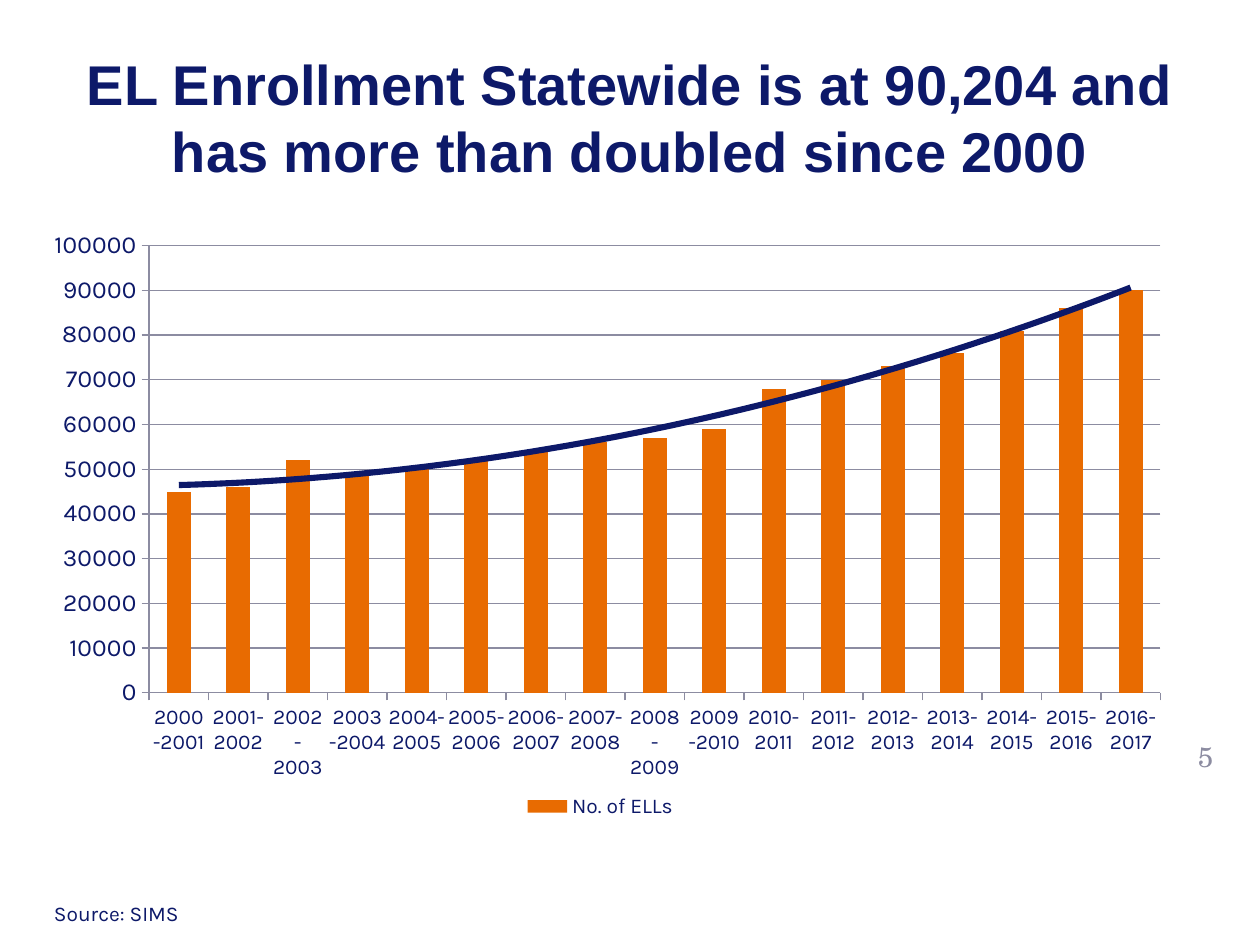
from pptx import Presentation
from pptx.chart.data import CategoryChartData
from pptx.dml.color import RGBColor
from pptx.enum.chart import XL_CHART_TYPE, XL_LEGEND_POSITION, XL_TICK_MARK
from pptx.enum.text import MSO_ANCHOR, PP_ALIGN
from pptx.oxml import parse_xml
from pptx.oxml.ns import nsdecls, qn
from pptx.util import Pt

COLUMN = XL_CHART_TYPE.COLUMN_CLUSTERED
BOTTOM = XL_LEGEND_POSITION.BOTTOM
TICK_OUT, TICK_NONE = XL_TICK_MARK.OUTSIDE, XL_TICK_MARK.NONE
TOP, MIDDLE = MSO_ANCHOR.TOP, MSO_ANCHOR.MIDDLE
LEFT, CENTER = PP_ALIGN.LEFT, PP_ALIGN.CENTER
NAVY, ORANGE, GRAY = "0D1969", "E86B01", "8C8CA1"


def style(font, name, size, color, bold=False):
    font.name, font.size, font.bold = name, Pt(size), bold
    font.color.rgb = RGBColor.from_string(color)


def set_layout(parent, index, x, y, w, h, inner=False):
    """Give a chart part a fixed place, in fractions of the chart."""
    for old in parent.findall(qn("c:layout")):
        parent.remove(old)
    target = '<c:layoutTarget val="inner"/>' if inner else ""
    parent.insert(index, parse_xml(
        f'<c:layout {nsdecls("c")}><c:manualLayout>{target}'
        '<c:xMode val="edge"/><c:yMode val="edge"/>'
        f'<c:x val="{x}"/><c:y val="{y}"/><c:w val="{w}"/><c:h val="{h}"/>'
        '</c:manualLayout></c:layout>'))


prs = Presentation()
prs.slide_width, prs.slide_height = Pt(720), Pt(540)
s = prs.slides.add_slide(prs.slide_layouts[6])

# Title, source and page number
texts = [
    ("EL Enrollment Statewide is at 90,204 and has more than doubled since 2000",
     (18, 21.6, 684, 90), "Arial", 32, NAVY, True, CENTER, MIDDLE),
    ("Source: SIMS", (23.76, 511.2, 354, 21.6), "Karla", 12, NAVY, False, LEFT, TOP),
    ("5", (668, 414, 42, 36), "TeX Gyre Schola", 16, GRAY, False, CENTER, MIDDLE),
]
for text, box, face, size, color, bold, align, anchor in texts:
    tf = s.shapes.add_textbox(*map(Pt, box)).text_frame
    tf.text = text
    tf.word_wrap = True
    tf.vertical_anchor = anchor
    p = tf.paragraphs[0]
    p.alignment = align
    style(p.runs[0].font, face, size, color, bold)

# Enrollment chart
data = CategoryChartData()
data.categories = [f"{year}-{year + 1}" for year in range(2000, 2017)]
data.add_series("No. of ELLs", [
    45000, 46000, 52000, 49000, 50000, 52000, 54000, 56000, 57000,
    59000, 68000, 70000, 73000, 76000, 81000, 86000, 90000])
chart = s.shapes.add_chart(COLUMN, Pt(18), Pt(126), Pt(672), Pt(360), data).chart
style(chart.font, "Karla", 18, NAVY)
chart.has_title = False
plot = chart.plots[0]
plot.gap_width = 150
plot.vary_by_categories = False
series = plot.series[0]
series.format.fill.solid()
series.format.fill.fore_color.rgb = RGBColor.from_string(ORANGE)

# Axes and gridlines
value_axis, category_axis = chart.value_axis, chart.category_axis
value_axis.minimum_scale, value_axis.maximum_scale = 0, 100000
value_axis.major_unit = 10000
value_axis.has_major_gridlines = True
for axis, size in ((value_axis, 14), (category_axis, 12)):
    style(axis.tick_labels.font, "Karla", size, NAVY)
    axis.major_tick_mark, axis.minor_tick_mark = TICK_OUT, TICK_NONE
for part in (value_axis, category_axis, value_axis.major_gridlines):
    part.format.line.width = Pt(0.75)
    part.format.line.color.rgb = RGBColor.from_string(GRAY)

# Quadratic trend line
series._element.find(qn("c:cat")).addprevious(parse_xml(
    f'<c:trendline {nsdecls("c", "a")}><c:spPr><a:ln w="{Pt(3.5)}"><a:solidFill>'
    f'<a:srgbClr val="{NAVY}"/></a:solidFill></a:ln></c:spPr>'
    '<c:trendlineType val="poly"/><c:order val="2"/>'
    '<c:dispRSqr val="0"/><c:dispEq val="0"/></c:trendline>'))

# Legend without the trend line, and fixed places
chart.has_legend = True
legend = chart.legend
legend.position = BOTTOM
legend.include_in_layout = False
style(legend.font, "Karla", 12, NAVY)
set_layout(legend._element, 1, 0.42, 0.9, 0.14, 0.06)
legend._element.insert(1, parse_xml(
    f'<c:legendEntry {nsdecls("c")}><c:idx val="1"/><c:delete val="1"/></c:legendEntry>'))
plot_area = chart._chartSpace.chart.plotArea
set_layout(plot_area, 0, 0.1, 0.04, 0.86, 0.71, inner=True)

prs.save("out.pptx")
